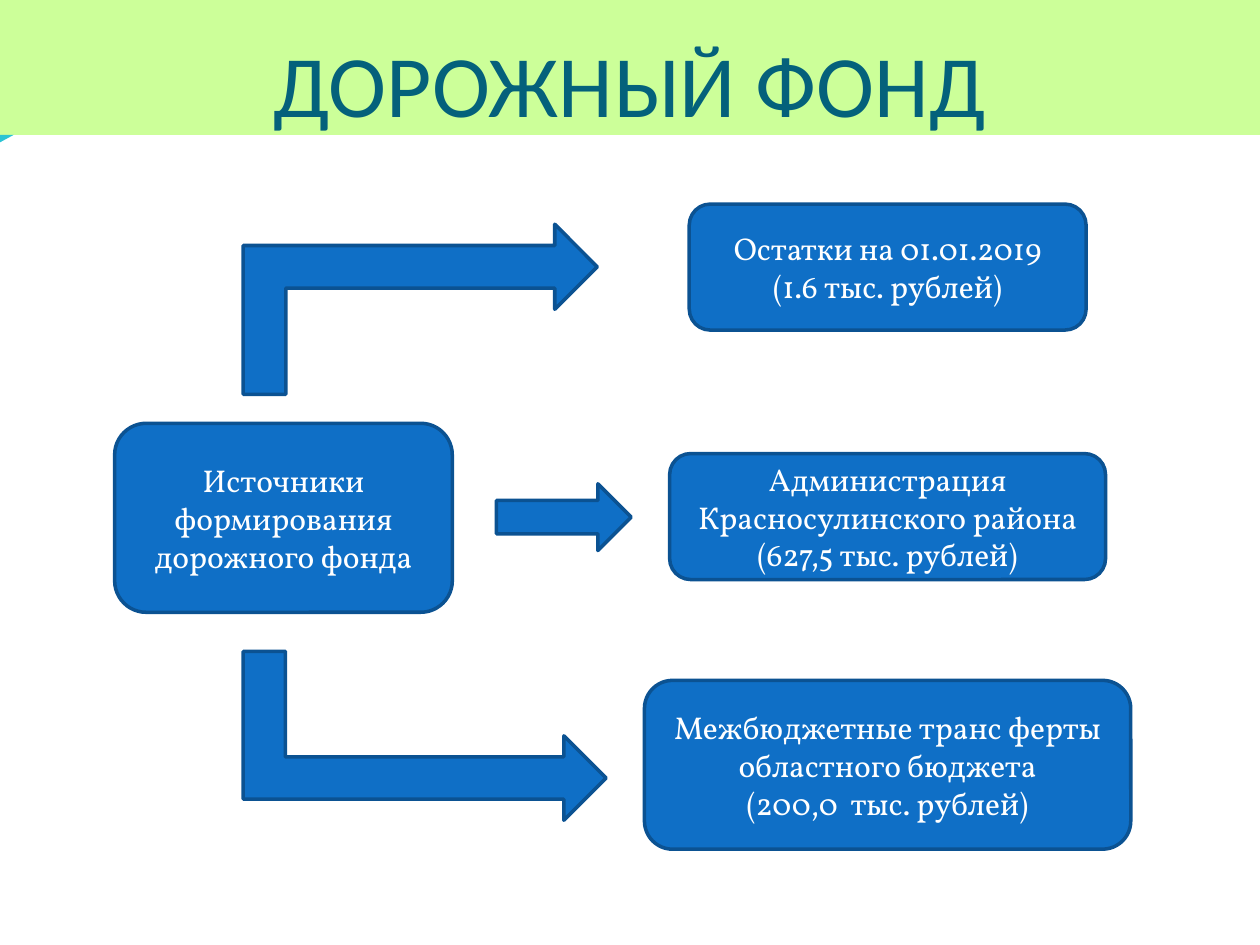
from pptx import Presentation
from pptx.dml.color import RGBColor
from pptx.enum.shapes import MSO_SHAPE
from pptx.enum.text import MSO_ANCHOR, MSO_AUTO_SIZE, PP_ALIGN
from pptx.util import Inches, Pt

BOX = MSO_SHAPE.ROUNDED_RECTANGLE
ARROW = MSO_SHAPE.RIGHT_ARROW
BENT_ARROW = MSO_SHAPE.BENT_UP_ARROW
CENTER = PP_ALIGN.CENTER
MIDDLE, BOTTOM = MSO_ANCHOR.MIDDLE, MSO_ANCHOR.BOTTOM
NO_AUTOFIT = MSO_AUTO_SIZE.NONE

LIME = RGBColor(0xCC, 0xFF, 0x99)
TEAL = RGBColor(0x04, 0x61, 0x7B)
CYAN = RGBColor(0x2B, 0xC4, 0xD4)
BLUE = RGBColor(0x0F, 0x6F, 0xC6)
NAVY = RGBColor(0x0B, 0x52, 0x92)
WHITE = RGBColor(0xFF, 0xFF, 0xFF)

TITLE_FONT, BODY_FONT = "Calibri", "Vollkorn"
WIDTH, HEIGHT = Inches(10), Inches(7.5)
COLS, ROWS = 100, 75


class FundSlide:
    def __init__(self, prs):
        self.s = prs.slides.add_slide(prs.slide_layouts[5])

    def place(self, col, row, cols, rows):
        return (int(WIDTH * col / COLS), int(HEIGHT * row / ROWS),
                int(WIDTH * cols / COLS), int(HEIGHT * rows / ROWS))

    def add_lines(self, tf, lines, font, size, color, anchor):
        tf.word_wrap = True
        tf.auto_size = NO_AUTOFIT
        tf.vertical_anchor = anchor
        for i, line in enumerate(lines):
            p = tf.add_paragraph() if i else tf.paragraphs[0]
            p.alignment = CENTER
            r = p.add_run()
            r.text = line
            r.font.name = font
            r.font.size = Pt(size)
            r.font.color.rgb = color

    def title(self, text, rows):
        sp = self.s.shapes.title
        sp.left, sp.top, sp.width, sp.height = self.place(0, 0, COLS, rows)
        sp.fill.solid()
        sp.fill.fore_color.rgb = LIME
        tf = sp.text_frame
        tf.margin_left = tf.margin_right = tf.margin_bottom = 0
        tf.margin_top = Inches(0.05)
        self.add_lines(tf, [text], TITLE_FONT, 50, TEAL, BOTTOM)

    def wave_tip(self, row, cols, rows):
        left, top, width, height = self.place(0, row, cols, rows)
        builder = self.s.shapes.build_freeform(left, top)
        builder.add_line_segments([(left + width, top), (left, top + height)])
        sp = builder.convert_to_shape()
        sp.shadow.inherit = False
        sp.fill.solid()
        sp.fill.fore_color.rgb = CYAN
        sp.line.fill.background()

    def shape(self, kind, *cells):
        sp = self.s.shapes.add_shape(kind, *self.place(*cells))
        sp.shadow.inherit = False
        sp.fill.solid()
        sp.fill.fore_color.rgb = BLUE
        sp.line.color.rgb = NAVY
        sp.line.width = Pt(2)
        return sp

    def box(self, cells, *lines):
        sp = self.shape(BOX, *cells)
        self.add_lines(sp.text_frame, lines, BODY_FONT, 18, WHITE, MIDDLE)

    def bent_arrow(self, cells, rotation, flip=False):
        sp = self.shape(BENT_ARROW, *cells)
        sp.rotation = rotation
        if flip:
            sp._element.spPr.xfrm.set("flipV", "1")


def main():
    prs = Presentation()
    prs.slide_width, prs.slide_height = WIDTH, HEIGHT
    slide = FundSlide(prs)
    slide.title("ДОРОЖНЫЙ ФОНД", 10.7)
    slide.wave_tip(10.7, 1.1, 0.6)
    slide.box((9.1, 33.6, 26.8, 15), "Источники формирования дорожного фонда")
    sources = [
        (16.2, 31.5, 10, ["Остатки на 01.01.2019", "(1.6 тыс. рублей)"]),
        (36, 34.6, 10, ["Администрация Красносулинского района (627,5 тыс. рублей)"]),
        (54, 38.6, 13.4, ["Межбюджетные транс ферты областного бюджета",
                          "(200,0  тыс. рублей)"]),
    ]
    center = 70.45
    for row, cols, rows, lines in sources:
        slide.box((center - cols / 2, row, cols, rows), *lines)
    slide.shape(ARROW, 39.4, 38.4, 10.7, 5.3)
    slide.bent_arrow((26.6, 10.5, 13.5, 28.1), 270, flip=True)
    slide.bent_arrow((27, 44, 13.4, 28.8), 90)
    prs.save("out.pptx")


if __name__ == "__main__":
    main()
